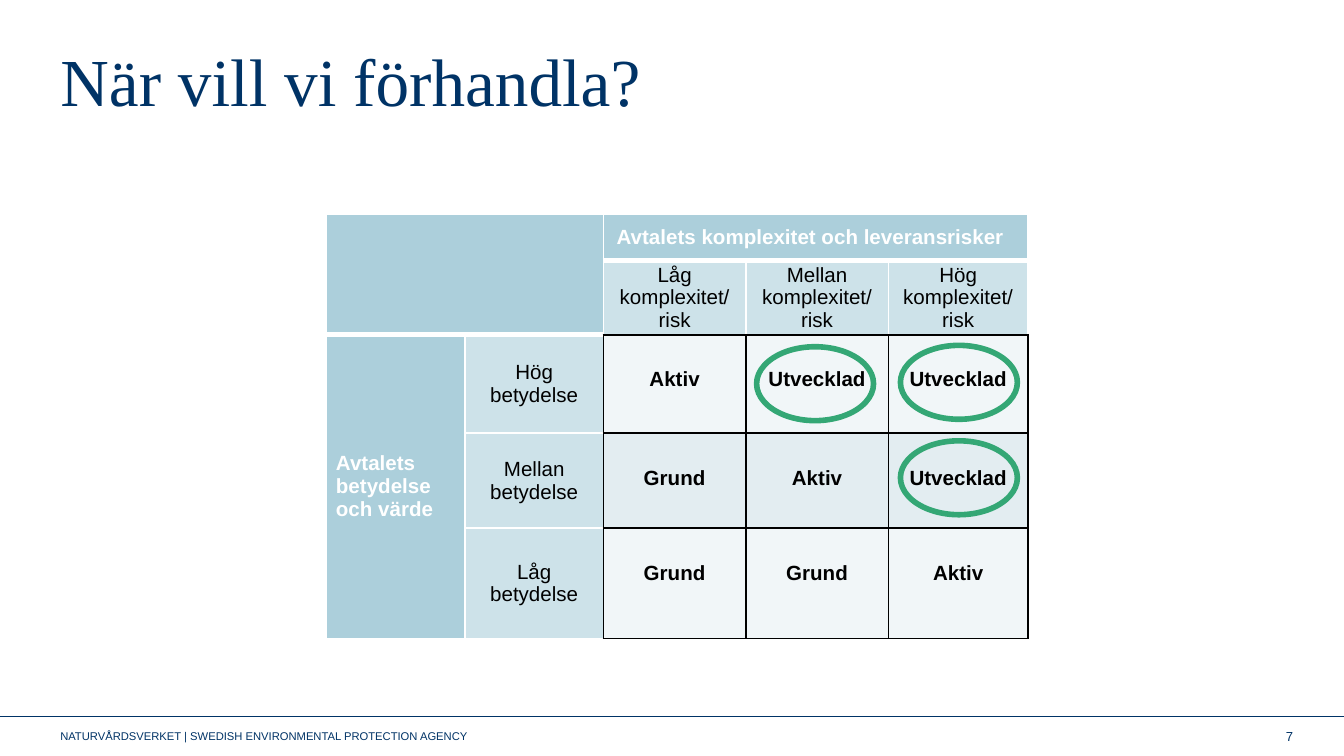
"""Build the slide on when to negotiate: a contract matrix with three cells ringed."""
from dataclasses import dataclass

from lxml.etree import SubElement
from pptx import Presentation
from pptx.dml.color import RGBColor
from pptx.enum.shapes import MSO_CONNECTOR, MSO_SHAPE
from pptx.enum.text import MSO_ANCHOR, MSO_AUTO_SIZE, PP_ALIGN
from pptx.oxml import parse_xml
from pptx.oxml.ns import nsdecls, qn
from pptx.util import Inches, Pt

NAVY, GREEN, BLACK, WHITE = "003366", "34A775", "000000", "FFFFFF"
HEAD, LABEL, LIGHT, SHADE = "ACCFDB", "CDE2E9", "F1F6F8", "E3EDF1"
COLS = [1.03, 1.03, 1.06, 1.06, 1.04]
ROWS = [0.35, 0.35, 0.73, 0.71, 0.82]
LEVELS = ["Låg", "Mellan", "Hög"]
MATRIX = [
    ["Aktiv", "Utvecklad", "Utvecklad"],
    ["Grund", "Aktiv", "Utvecklad"],
    ["Grund", "Grund", "Aktiv"],
]


@dataclass
class Block:
    row: int
    col: int
    text: str
    fill: str
    color: str = BLACK
    bold: bool = False
    rows: int = 1
    cols: int = 1
    align: PP_ALIGN = PP_ALIGN.CENTER
    anchor: MSO_ANCHOR = MSO_ANCHOR.MIDDLE
    before: float = 0
    top: float = 0
    right: float = 0.07
    line: str = WHITE
    line_right: str = WHITE
    line_bottom: str = WHITE
    bottom_width: float = 1


@dataclass
class Ring:
    x: float
    y: float


@dataclass
class Footer:
    x: float
    width: float
    text: str
    size: float
    align: PP_ALIGN


RINGS = [Ring(5.63, 2.58), Ring(6.7, 2.57), Ring(6.7, 3.28)]
FOOTERS = [
    Footer(0.35, 3.38, "NATURVÅRDSVERKET | SWEDISH ENVIRONMENTAL PROTECTION AGENCY",
           6, PP_ALIGN.LEFT),
    Footer(7.47, 2.25, "7", 7, PP_ALIGN.RIGHT),
]


def rgb(value: str) -> RGBColor:
    return RGBColor.from_string(value)


def style(p, size: float, color: str, align: PP_ALIGN, font: str = "Arial", bold: bool = False) -> None:
    p.alignment = align
    p.font.name, p.font.size, p.font.bold = font, Pt(size), bold
    p.font.color.rgb = rgb(color)


def table_blocks() -> list[Block]:
    blocks = [
        Block(0, 0, "", HEAD, rows=2, cols=2, bottom_width=3),
        Block(0, 2, "Avtalets komplexitet och leveransrisker", HEAD, WHITE, True,
              cols=3, right=0.15, bottom_width=3),
        Block(2, 0, "Avtalets betydelse och värde", HEAD, WHITE, True,
              rows=3, align=PP_ALIGN.LEFT, before=6),
    ]
    for i, level in enumerate(LEVELS):
        blocks.append(Block(1, 2 + i, f"{level} komplexitet/ risk", LABEL, line_bottom=BLACK))
        blocks.append(Block(4 - i, 1, f"{level} betydelse", LABEL, before=6, line_right=BLACK))
    for i, row in enumerate(MATRIX):
        for j, text in enumerate(row):
            blocks.append(Block(2 + i, 2 + j, text, SHADE if i % 2 else LIGHT, bold=True,
                                anchor=MSO_ANCHOR.TOP, top=0.25, line=BLACK,
                                line_right=BLACK, line_bottom=BLACK))
    return blocks


def add_borders(cell, block: Block) -> None:
    edges = [("lnL", block.line, 1), ("lnR", block.line_right, 1),
             ("lnT", block.line, 1), ("lnB", block.line_bottom, block.bottom_width)]
    for i, (tag, color, width) in enumerate(edges):
        cell._tc.get_or_add_tcPr().insert(i, parse_xml(
            f'<a:{tag} {nsdecls("a")} w="{Pt(width)}"><a:solidFill>'
            f'<a:srgbClr val="{color}"/></a:solidFill></a:{tag}>'))


def draw_block(table, block: Block) -> None:
    cell = table.cell(block.row, block.col)
    if block.rows * block.cols > 1:
        cell.merge(table.cell(block.row + block.rows - 1, block.col + block.cols - 1))
    for i in range(block.rows):
        for j in range(block.cols):
            part = table.cell(block.row + i, block.col + j)
            part.fill.solid()
            part.fill.fore_color.rgb = rgb(block.fill)
            add_borders(part, block)
    cell.margin_left, cell.margin_right = Inches(0.07), Inches(block.right)
    cell.margin_top, cell.margin_bottom = Inches(block.top), 0
    cell.vertical_anchor = block.anchor
    cell.text = block.text
    p = cell.text_frame.paragraphs[0]
    p.space_before, p.space_after = Pt(block.before), Pt(6)
    style(p, 11, block.color, block.align, bold=block.bold)


def add_matrix(s) -> None:
    frame = s.shapes.add_table(len(ROWS), len(COLS), Inches(2.43), Inches(1.59),
                               Inches(5.21), Inches(3.17))
    table = frame.table
    for column, width in zip(table.columns, COLS):
        column.width = Inches(width)
    for row, height in zip(table.rows, ROWS):
        row.height = Inches(height)
    frame.width, frame.height = Inches(5.21), Inches(3.17)
    for block in table_blocks():
        draw_block(table, block)


def add_ring(s, ring: Ring) -> None:
    sp = s.shapes.add_shape(MSO_SHAPE.OVAL, Inches(ring.x), Inches(ring.y), Inches(0.87), Inches(0.55))
    sp.shadow.inherit = False
    sp.fill.background()
    sp.line.color.rgb = rgb(GREEN)
    sp.line.width = Pt(3)


def add_footer(s, footer: Footer) -> None:
    tf = s.shapes.add_textbox(Inches(footer.x), Inches(5.33), Inches(footer.width), Inches(0.3)).text_frame
    tf.word_wrap = True
    tf.vertical_anchor = MSO_ANCHOR.MIDDLE
    tf.text = footer.text
    style(tf.paragraphs[0], footer.size, NAVY, footer.align)


def add_rule(s) -> None:
    line = s.shapes.add_connector(MSO_CONNECTOR.STRAIGHT, 0, Inches(5.33), Inches(10), Inches(5.33))
    line.line.color.rgb = rgb(NAVY)
    line.line.width = Pt(0.4)
    SubElement(line._element.spPr, qn("a:effectLst"))


def set_title(s, text: str) -> None:
    title = s.shapes.title
    title.left, title.top = Inches(0.35), Inches(0.29)
    title.width, title.height = Inches(9.37), Inches(0.8)
    tf = title.text_frame
    tf.text = text
    tf.auto_size = MSO_AUTO_SIZE.NONE
    tf.vertical_anchor = MSO_ANCHOR.TOP
    p = tf.paragraphs[0]
    p.line_spacing = Pt(39.6)
    style(p, 36, NAVY, PP_ALIGN.LEFT, "Times New Roman")


def main() -> None:
    prs = Presentation()
    prs.slide_width = Inches(10)
    prs.slide_height = prs.slide_width * 9 // 16
    s = prs.slides.add_slide(prs.slide_layouts[5])
    add_rule(s)
    for footer in FOOTERS:
        add_footer(s, footer)
    set_title(s, "När vill vi förhandla?")
    add_matrix(s)
    for ring in RINGS:
        add_ring(s, ring)
    prs.save("out.pptx")


if __name__ == "__main__":
    main()
